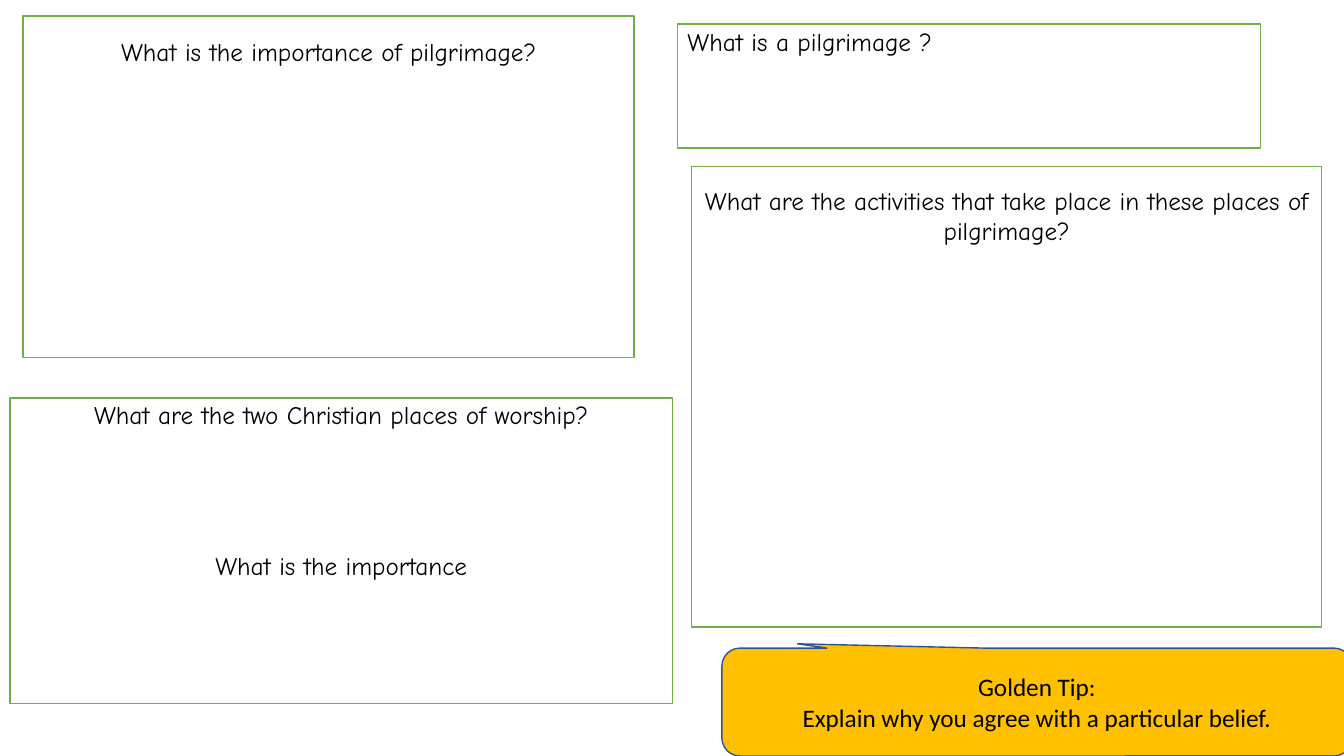
"""Build a pilgrimage revision slide with question boxes and a tip."""
from pptx import Presentation
from pptx.dml.color import RGBColor
from pptx.enum import shapes, text
from pptx.util import Inches, Pt

BLACK = RGBColor(0, 0, 0)
WHITE = RGBColor(255, 255, 255)
GREEN = RGBColor(0x70, 0xAD, 0x47)
GOLD = RGBColor(0xFF, 0xC0, 0)
NAVY = RGBColor(0x31, 0x53, 0x8F)
KIND = shapes.MSO_SHAPE
ALIGN = text.PP_ALIGN
ANCHOR = text.MSO_ANCHOR


def write(shape, *lines, font="Comic Neue", size=18, align=ALIGN.CENTER,
          anchor=ANCHOR.TOP, top=0.05, gap=0):
    """Write lines into a shape, with a gap in inches between them."""
    frame = shape.text_frame
    frame.word_wrap = True
    frame.vertical_anchor = anchor
    frame.margin_top = Inches(top)
    frame.text = "\n".join(lines)
    for index, para in enumerate(frame.paragraphs):
        para.alignment = align
        para.space_before = Inches(gap if index else 0)
        para.font.name = font
        para.font.size = Pt(size)
        para.font.color.rgb = BLACK


def draw(slide, kind, area, fill, line):
    """Draw a filled and outlined shape."""
    shape = slide.shapes.add_shape(kind, *map(Inches, area))
    shape.shadow.inherit = False
    shape.fill.solid()
    shape.fill.fore_color.rgb = fill
    shape.line.color.rgb = line
    shape.line.width = Pt(1)
    return shape


def ask(slide, area, *lines, **style):
    """Add a green-edged box for questions and answers."""
    write(draw(slide, KIND.RECTANGLE, area, WHITE, GREEN), *lines, **style)


def tip(slide, area, *lines):
    """Add a golden callout."""
    shape = draw(slide, KIND.ROUNDED_RECTANGULAR_CALLOUT, area, GOLD, NAVY)
    shape.adjustments[0] = -0.38
    shape.adjustments[1] = -0.54
    write(shape, *lines, font="Calibri", anchor=ANCHOR.MIDDLE)


def main():
    """Build and save the slide."""
    deck = Presentation()
    deck.slide_width = Inches(13.33)
    deck.slide_height = Inches(7.5)
    slide = deck.slides.add_slide(deck.slide_layouts[6])
    ask(slide, (0.23, 0.16, 6.06, 3.39),
        "What is the importance of pilgrimage?", top=0.2)
    ask(slide, (6.86, 1.65, 6.25, 4.57),
        "What are the activities that take place in these places of pilgrimage?",
        top=0.19)
    ask(slide, (0.1, 3.95, 6.57, 3.03),
        "What are the two Christian places of worship?",
        "What is the importance", top=0.01, gap=1.2)
    ask(slide, (6.72, 0.24, 5.78, 1.23), "What is a pilgrimage ?",
        align=ALIGN.LEFT, top=0.02)
    tip(slide, (7.16, 6.43, 6.25, 1.07), "Golden Tip:",
        "Explain why you agree with a particular belief.")
    deck.save("out.pptx")


if __name__ == "__main__":
    main()
